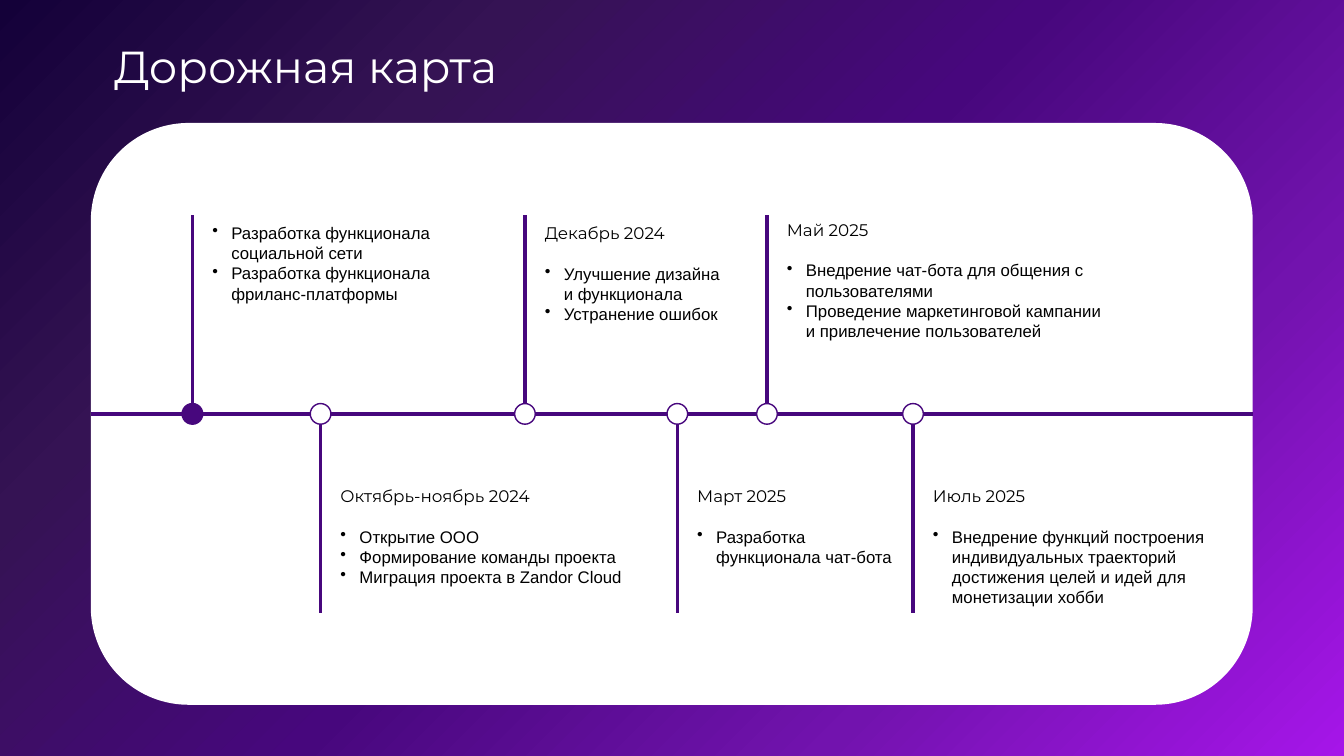
import pptx
import pptx.util
import pptx.oxml
from dataclasses import dataclass
from lxml import etree
from pptx.dml.color import RGBColor
from pptx.enum.shapes import MSO_CONNECTOR, MSO_SHAPE
from pptx.enum.text import MSO_ANCHOR, MSO_AUTO_SIZE
from pptx.oxml.ns import qn
from pptx.util import Cm, Pt


@dataclass(frozen=True)
class Theme:
    accent: RGBColor = RGBColor.from_string("47077D")
    white: RGBColor = RGBColor.from_string("FFFFFF")
    black: RGBColor = RGBColor.from_string("000000")
    backdrop: tuple = ("140139", "351354", "47077D", "7213AE", "A615E9")
    heading_font: str = "Montserrat"
    body_font: str = "Arial"
    title_size: Pt = Pt(32)
    text_size: Pt = Pt(12)


theme = Theme()


def add_line(x1, y1, x2, y2, width):
    line = s.shapes.add_connector(MSO_CONNECTOR.STRAIGHT, Cm(x1), Cm(y1), Cm(x2), Cm(y2))
    line.line.color.rgb = theme.accent
    line.line.width = Pt(width)
    etree.SubElement(line._element.spPr, qn("a:effectLst"))
    return line


def style(p, font, size, color):
    p.font.name = font
    p.font.size = size
    p.font.color.rgb = color


prs = pptx.Presentation()
prs.slide_width, prs.slide_height = Cm(33.87), Cm(19.05)
s = prs.slides.add_slide(prs.slide_layouts[5])

# Background: five evenly spaced stops, running to the lower right
fill = s.background.fill
fill.gradient()
fill.gradient_angle = 315
stops = s._element.find(".//" + qn("a:gsLst"))
for stop in list(stops):
    stops.remove(stop)
for i, color in enumerate(theme.backdrop):
    stop = etree.SubElement(stops, qn("a:gs"), pos=str(i * 25000))
    etree.SubElement(stop, qn("a:srgbClr"), val=color)

# Title
title = s.shapes.title
title.left, title.top, title.width, title.height = Cm(2.62), Cm(0.86), Cm(11.07), Cm(1.63)
tf = title.text_frame
tf.text = "Дорожная карта"
tf.word_wrap = False
tf.auto_size = MSO_AUTO_SIZE.NONE
tf.vertical_anchor = MSO_ANCHOR.TOP
p = tf.paragraphs[0]
p.alignment = pptx.enum.text.PP_ALIGN.LEFT
style(p, theme.heading_font, theme.title_size, theme.white)

# White card and the time axis across its middle
card = s.shapes.add_shape(MSO_SHAPE.ROUNDED_RECTANGLE, Cm(2.29), Cm(3.1), Cm(29.28), Cm(14.66))
card.adjustments[0] = 0.168
card.shadow.inherit = False
card.fill.solid()
card.fill.fore_color.rgb = theme.white
card.line.fill.background()

axis_y = 10.43
axis = add_line(2.29, axis_y, 31.57, axis_y, 3)
axis.begin_connect(card, 1)
axis.end_connect(card, 3)

# Milestones: x, stem end, text top, text width, text height, heading, bullets
radius = 0.26
up, down = 5.41, 15.44
milestones = [
    (4.85, up, 5.49, 6.15, 2.31, None,
     ["Разработка функционала социальной сети", "Разработка функционала фриланс-платформы"]),
    (8.08, down, 12.12, 7.98, 2.82, "Октябрь-ноябрь 2024",
     ["Открытие ООО", "Формирование команды проекта", "Миграция проекта в Zandor Cloud"]),
    (13.23, up, 5.49, 5.0, 2.82, "Декабрь 2024",
     ["Улучшение дизайна и функционала", "Устранение ошибок"]),
    (17.07, down, 12.12, 5.51, 2.31, "Март 2025",
     ["Разработка функционала чат-бота"]),
    (19.33, up, 5.41, 8.74, 3.33, "Май 2025",
     ["Внедрение чат-бота для общения с пользователями",
      "Проведение маркетинговой кампании и привлечение пользователей"]),
    (23.01, down, 12.12, 7.9, 3.33, "Июль 2025",
     ["Внедрение функций построения индивидуальных траекторий достижения целей "
      "и идей для монетизации хобби"]),
]

for i, (x, stem_end, top, width, height, heading, bullets) in enumerate(milestones):
    # Marker, filled for the first milestone only
    dot = s.shapes.add_shape(MSO_SHAPE.OVAL, Cm(x - radius), Cm(axis_y - radius),
                             Cm(2 * radius), Cm(2 * radius))
    dot.shadow.inherit = False
    dot.fill.solid()
    dot.fill.fore_color.rgb = theme.accent if i == 0 else theme.white
    dot.line.color.rgb = theme.accent
    dot.line.width = Pt(1)

    # Stem
    stem_start = axis_y - radius if stem_end == up else axis_y + radius
    add_line(x, stem_start, x, stem_end, 2.25)

    # Heading and bullets
    tf = s.shapes.add_textbox(Cm(x + 0.25), Cm(top), Cm(width), Cm(height)).text_frame
    tf.word_wrap = True
    tf.auto_size = MSO_AUTO_SIZE.SHAPE_TO_FIT_TEXT
    p = tf.paragraphs[0]
    if heading:
        p.text = heading
        p.space_after = Pt(14.5)
        style(p, theme.heading_font, theme.text_size, theme.black)
    for j, bullet in enumerate(bullets):
        if heading or j:
            p = tf.add_paragraph()
        p.text = bullet
        style(p, theme.body_font, theme.text_size, theme.black)
        pPr = p._p.get_or_add_pPr()
        pPr.set("marL", str(Cm(0.48)))
        pPr.set("indent", str(-Cm(0.48)))
        mark = pptx.oxml.parse_xml(
            '<a:buChar xmlns:a="http://schemas.openxmlformats.org/drawingml/2006/main" char="•"/>')
        pPr.find(qn("a:defRPr")).addprevious(mark)

prs.save("out.pptx")
